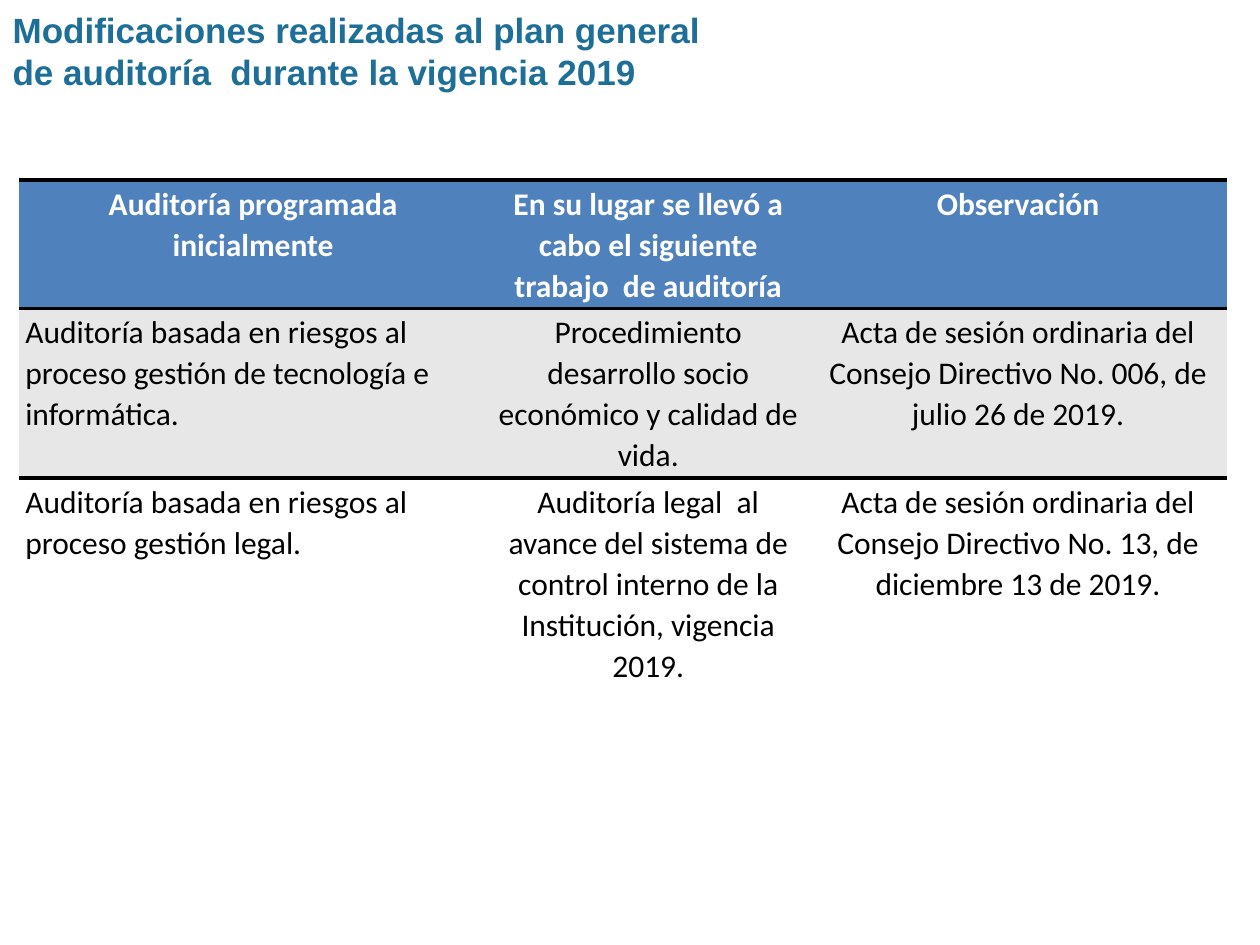
"""Build the slide on changes made to the 2019 audit plan."""
from lxml import etree
from pptx import Presentation
from pptx import util as u
from pptx.dml.color import RGBColor
from pptx.enum import text
from pptx.oxml import ns

HUES = {"title": "1D6F98", "head": "4F81BD", "band": "E7E7E7",
        "white": "FFFFFF", "black": "000000"}
PLAIN = "{2D5ABB26-0587-4C30-8999-92F81FD0307C}"
ROWS = [
    ("Auditoría programada inicialmente",
     "En su lugar se llevó a cabo el siguiente trabajo  de auditoría",
     "Observación"),
    ("Auditoría basada en riesgos al proceso gestión de tecnología e informática.",
     "Procedimiento desarrollo socio económico y calidad de vida.",
     "Acta de sesión ordinaria del Consejo Directivo No. 006, de julio 26 de 2019."),
    ("Auditoría basada en riesgos al proceso gestión legal.",
     "Auditoría legal  al avance del sistema de control interno de la Institución, vigencia 2019.",
     "Acta de sesión ordinaria del Consejo Directivo No. 13, de diciembre 13 de 2019."),
]
FILLS = ["head", "band", "white"]
WIDTHS = [9.45, 6.48, 8.43]
HEIGHTS = [2.58, 3.39, 4.19]


def style(para, face, size, hue, bold):
    for run in para.runs:
        font = run.font
        font.name, font.size, font.bold = face, u.Pt(size), bold
        font.color.rgb = RGBColor.from_string(HUES[hue])


def rule(cell, side):
    line = etree.SubElement(cell._tc.get_or_add_tcPr(), ns.qn("a:" + side),
                            w=str(u.Pt(2.25)))
    fill = etree.SubElement(line, ns.qn("a:solidFill"))
    etree.SubElement(fill, ns.qn("a:srgbClr"), val=HUES["black"])


deck = Presentation()
deck.slide_width, deck.slide_height = u.Cm(25.4), u.Cm(19.05)
slide = deck.slides.add_slide(deck.slide_layouts[5])

title = slide.shapes.title
title.left, title.top = u.Cm(0), u.Cm(0.05)
title.width, title.height = u.Cm(15.16), u.Cm(1.96)
frame = title.text_frame
frame.text = "Modificaciones realizadas al plan general de auditoría  durante la vigencia 2019"
frame.word_wrap = True
frame.auto_size = text.MSO_AUTO_SIZE.NONE
frame.vertical_anchor = text.MSO_ANCHOR.TOP
frame.paragraphs[0].alignment = text.PP_ALIGN.LEFT
style(frame.paragraphs[0], "Arial", 20, "title", True)

table = slide.shapes.add_table(3, 3, u.Cm(0.38), u.Cm(3.63), u.Cm(sum(WIDTHS)),
                               u.Cm(sum(HEIGHTS))).table
table.horz_banding = False
table._tbl.tblPr.find(ns.qn("a:tableStyleId")).text = PLAIN
for col, width in zip(table.columns, WIDTHS):
    col.width = u.Cm(width)
for row, height in zip(table.rows, HEIGHTS):
    row.height = u.Cm(height)

for r, words in enumerate(ROWS):
    head = r == 0
    for c, word in enumerate(words):
        cell = table.cell(r, c)
        if r < 2:
            rule(cell, "lnT")
        if head:
            rule(cell, "lnB")
        cell.fill.solid()
        cell.fill.fore_color.rgb = RGBColor.from_string(HUES[FILLS[r]])
        cell.margin_left = cell.margin_right = u.Cm(0.13)
        cell.margin_top = cell.margin_bottom = u.Cm(0.05)
        cell.text_frame.text = word
        para = cell.text_frame.paragraphs[0]
        para.line_spacing = 1.07
        left = c == 0 and not head
        para.alignment = text.PP_ALIGN.LEFT if left else text.PP_ALIGN.CENTER
        style(para, "Calibri", 18, "white" if head else "black", head)

deck.save("out.pptx")
